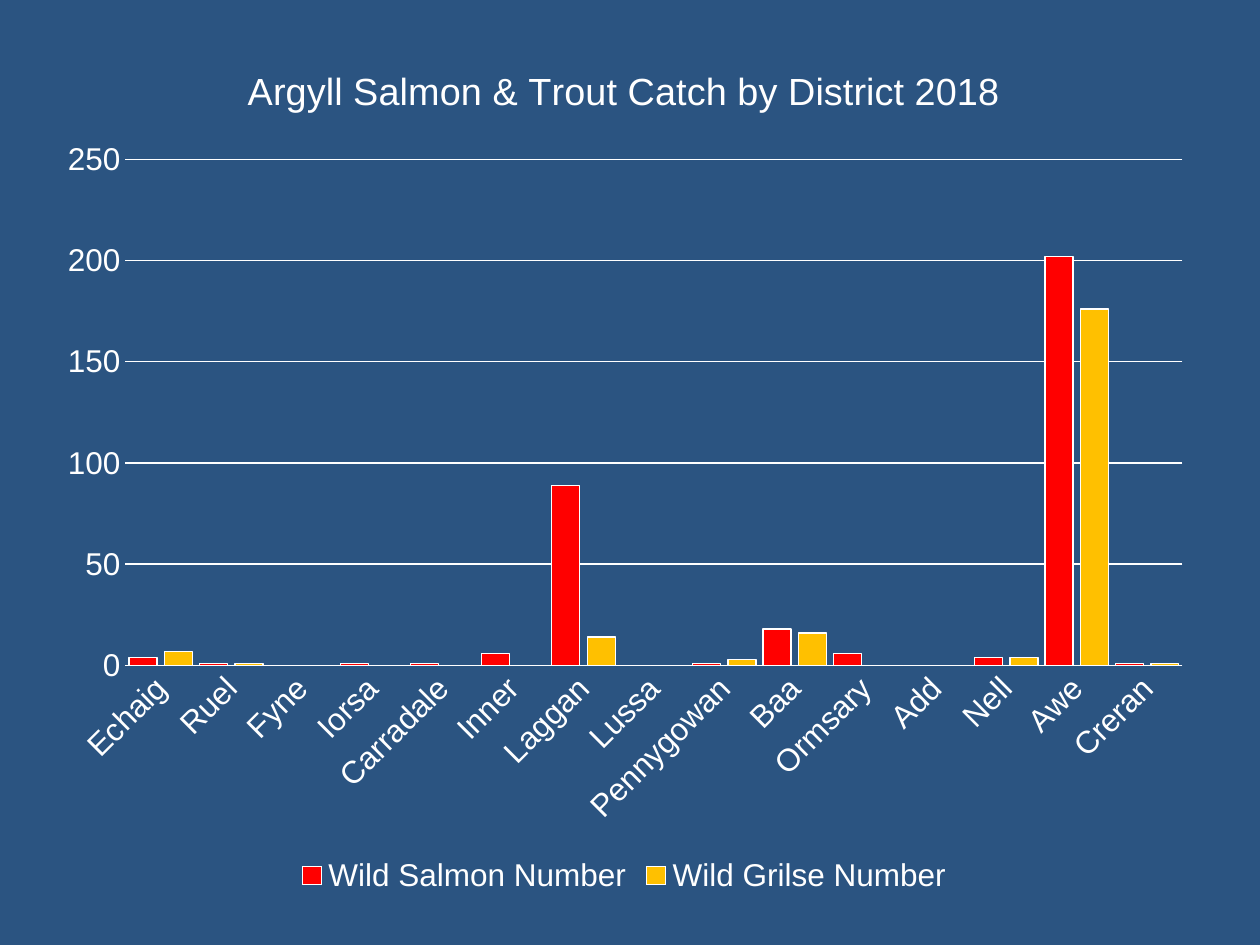
import pptx
import pptx.chart.data
import pptx.dml.color
import pptx.enum.chart
import pptx.oxml
import pptx.oxml.ns
import pptx.util

Pt = pptx.util.Pt
CHART_ENUM = pptx.enum.chart

CHART_LEFT, CHART_TOP = 25.2, 20.88
CHART_WIDTH, CHART_HEIGHT = 663.12, 493.2
DISTRICTS = ["Echaig", "Ruel", "Fyne", "Iorsa", "Carradale", "Inner", "Laggan",
             "Lussa", "Pennygowan", "Baa", "Ormsary", "Add", "Nell", "Awe", "Creran"]
CATCHES = [
    ("Wild Salmon Number", "FF0000", [4, 1, 0, 1, 1, 6, 89, 0, 1, 18, 6, 0, 4, 202, 1]),
    ("Wild Grilse Number", "FFC000", [7, 1, 0, 0, 0, 0, 14, 0, 3, 16, 0, 0, 4, 176, 1]),
]


def color(hex_string):
    return pptx.dml.color.RGBColor.from_string(hex_string)


def manual_layout(**points):
    """Return a c:layout element, given points within the chart."""
    full = {"x": CHART_WIDTH, "y": CHART_HEIGHT, "w": CHART_WIDTH, "h": CHART_HEIGHT}
    target = '<c:layoutTarget val="inner"/>' if "w" in points else ""
    modes = '<c:xMode val="edge"/><c:yMode val="edge"/>'
    parts = "".join(f'<c:{name} val="{value / full[name]:.5f}"/>'
                    for name, value in points.items())
    return pptx.oxml.parse_xml(
        f'<c:layout {pptx.oxml.ns.nsdecls("c")}><c:manualLayout>'
        f"{target}{modes}{parts}</c:manualLayout></c:layout>")


class SlideBuilder:
    font_name = "Arial"
    foreground = "FFFFFF"
    background = "2B5481"
    text_size = 18
    title_size = 21.6
    line_width = 0.75

    def __init__(self, slide):
        self.slide = slide
        fill = slide.background.fill
        fill.solid()
        fill.fore_color.rgb = color(self.background)

    def style_font(self, font, size):
        font.name = self.font_name
        font.size = Pt(size)
        font.bold = False
        font.color.rgb = color(self.foreground)

    def style_line(self, line):
        line.color.rgb = color(self.foreground)
        line.width = Pt(self.line_width)

    def column_chart(self, left, top, width, height, categories, series_rows):
        data = pptx.chart.data.CategoryChartData()
        data.categories = categories
        for name, _, values in series_rows:
            data.add_series(name, values)
        chart = self.slide.shapes.add_chart(
            CHART_ENUM.XL_CHART_TYPE.COLUMN_CLUSTERED,
            Pt(left), Pt(top), Pt(width), Pt(height), data).chart
        self.style_font(chart.font, self.text_size)

        # Columns
        plot = chart.plots[0]
        plot.vary_by_categories = False
        plot.gap_width = 25
        plot.overlap = -27
        for series, (_, fill_color, _) in zip(plot.series, series_rows):
            series.format.fill.solid()
            series.format.fill.fore_color.rgb = color(fill_color)
            self.style_line(series.format.line)
        return chart

    def axes(self, chart, maximum, step):
        for axis in (chart.category_axis, chart.value_axis):
            axis.major_tick_mark = CHART_ENUM.XL_TICK_MARK.NONE
            axis.minor_tick_mark = CHART_ENUM.XL_TICK_MARK.NONE
            self.style_font(axis.tick_labels.font, self.text_size)

        # Slanted district names
        category_axis = chart.category_axis
        self.style_line(category_axis.format.line)
        body = category_axis._element.find(".//" + pptx.oxml.ns.qn("a:bodyPr"))
        body.set("rot", str(-45 * 60000))
        body.set("vert", "horz")

        value_axis = chart.value_axis
        value_axis.minimum_scale = 0
        value_axis.maximum_scale = maximum
        value_axis.major_unit = step
        value_axis.format.line.fill.background()
        value_axis.has_major_gridlines = True
        self.style_line(value_axis.major_gridlines.format.line)

    def chart_title(self, chart, text, **position):
        chart.has_title = True
        title = chart.chart_title
        title.include_in_layout = False
        run = title.text_frame.paragraphs[0].add_run()
        run.text = text
        self.style_font(run.font, self.title_size)
        element = title._element
        for layout in element.findall(pptx.oxml.ns.qn("c:layout")):
            element.remove(layout)
        element.find(pptx.oxml.ns.qn("c:tx")).addnext(manual_layout(**position))

    def legend(self, chart):
        chart.has_legend = True
        chart.legend.position = CHART_ENUM.XL_LEGEND_POSITION.BOTTOM
        chart.legend.include_in_layout = False
        self.style_font(chart.legend.font, self.text_size)

    def plot_area(self, chart, **position):
        area = chart._chartSpace.chart.plotArea
        for layout in area.findall(pptx.oxml.ns.qn("c:layout")):
            area.remove(layout)
        area.insert(0, manual_layout(**position))


def main():
    presentation = pptx.Presentation()
    presentation.slide_width = Pt(720)
    presentation.slide_height = Pt(540)
    builder = SlideBuilder(presentation.slides.add_slide(presentation.slide_layouts[6]))

    # Catch by district
    chart = builder.column_chart(CHART_LEFT, CHART_TOP, CHART_WIDTH, CHART_HEIGHT,
                                 DISTRICTS, CATCHES)
    builder.axes(chart, maximum=250, step=50)
    builder.chart_title(chart, "Argyll Salmon & Trout Catch by District 2018", x=112.5, y=13.4)
    builder.legend(chart)
    builder.plot_area(chart, x=46.5, y=70.2, w=604, h=289.2)

    presentation.save("out.pptx")


if __name__ == "__main__":
    main()
